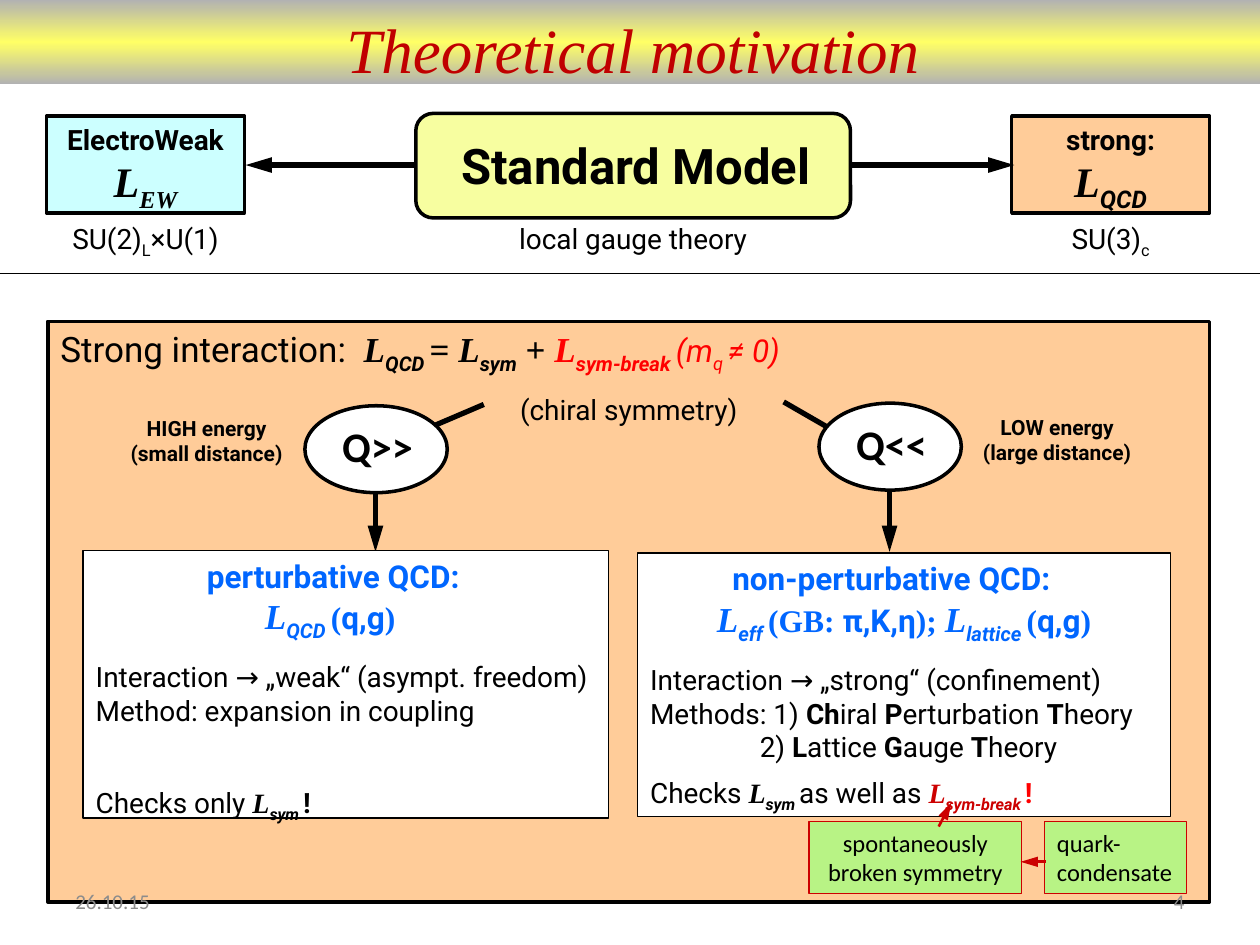
from copy import deepcopy

from lxml import etree
from pptx import Presentation
from pptx.dml.color import RGBColor
from pptx.enum.shapes import MSO_CONNECTOR, MSO_SHAPE
from pptx.enum.text import MSO_ANCHOR, MSO_AUTO_SIZE, PP_ALIGN
from pptx.oxml.ns import qn
from pptx.util import Inches, Pt

RECT, ROUND, OVAL = MSO_SHAPE.RECTANGLE, MSO_SHAPE.ROUNDED_RECTANGLE, MSO_SHAPE.OVAL
LEFT, CENTER, RIGHT = PP_ALIGN.LEFT, PP_ALIGN.CENTER, PP_ALIGN.RIGHT
TOP, MIDDLE = MSO_ANCHOR.TOP, MSO_ANCHOR.MIDDLE
FIXED, STRAIGHT = MSO_AUTO_SIZE.NONE, MSO_CONNECTOR.STRAIGHT
COLORS = {
    "black": "000000", "white": "FFFFFF", "cyan": "CCFFFF", "lemon": "F7FEA0",
    "peach": "FFCC99", "green": "B8F385", "blue": "0066FF", "red": "FF0000",
    "crimson": "CC0000", "title": "C00000", "silver": "B2B2B2", "yellow": "FFFF66",
    "grey": "8C8C8C",
}
STYLES = {
    "plain": {"name": "Roboto", "bold": False, "italic": False},
    "bold": {"name": "Roboto", "bold": True, "italic": False},
    "slant": {"name": "Roboto", "bold": False, "italic": True},
    "low": {"name": "Roboto", "bold": False, "italic": False, "baseline": -25},
    "lowslant": {"name": "Roboto", "bold": False, "italic": True, "baseline": -25},
    "index": {"name": "Roboto", "bold": True, "italic": True, "baseline": -25},
    "symbol": {"name": "Times New Roman", "bold": True, "italic": True},
    "serif": {"name": "Times New Roman", "bold": True, "italic": False},
    "headline": {"name": "Times New Roman", "bold": False, "italic": True},
    "label": {"name": "Calibri", "bold": False, "italic": False},
    "scale": {"name": "Calibri", "bold": True, "italic": False},
}


def para(*runs, **layout):
    """Pair the runs of a paragraph with its layout values."""
    return runs, layout


def term(index, **look):
    """Give the runs of a Lagrangian symbol with its index."""
    return ("L", "symbol", look), (index, "index", look)


class GridSlide:
    """Hold the style and the slide, measured on a grid of 100 by 75 cells."""

    def __init__(self, deck):
        """Open a slide with a title and two body placeholders."""
        self.slide = deck.slides.add_slide(deck.slide_layouts[3])
        self.shapes = self.slide.shapes
        self.column, self.row = deck.slide_width / 100, deck.slide_height / 75

    def cells(self, *lengths):
        """Turn alternating columns and rows into slide lengths."""
        return [round(n * (self.row if i % 2 else self.column)) for i, n in enumerate(lengths)]

    def color(self, name):
        """Look up a named colour."""
        return RGBColor.from_string(COLORS[name])

    def paint(self, shape, fill, line, width):
        """Set fill and outline."""
        if fill:
            shape.fill.solid()
            shape.fill.fore_color.rgb = self.color(fill)
        if line:
            shape.line.color.rgb = self.color(line)
            shape.line.width = Pt(width)
        else:
            shape.line.fill.background()

    def typeset(self, shape, paragraphs, size=16, style="plain", color="black",
                align=CENTER, anchor=TOP, wrap=True):
        """Fill a shape with formatted paragraphs."""
        frame = shape.text_frame
        settings = {"word_wrap": wrap, "auto_size": FIXED, "vertical_anchor": anchor}
        for key, value in settings.items():
            setattr(frame, key, value)
        for number, (runs, layout) in enumerate(paragraphs):
            paragraph = frame.paragraphs[0] if number == 0 else frame.add_paragraph()
            layout = {"alignment": align, "before": 0, "line_spacing": 1.0, **layout}
            margins = {"marL": layout.pop("left", 0), "marR": layout.pop("right", 0), "indent": 0}
            paragraph.space_before = Pt(layout.pop("before"))
            for key, value in layout.items():
                setattr(paragraph, key, value)
            properties = paragraph._p.get_or_add_pPr()
            for key, value in margins.items():
                properties.set(key, str(Inches(value)))
            etree.SubElement(properties, qn("a:buNone"))
            for item in runs:
                words, kind, *look = (item, style) if isinstance(item, str) else item
                values = {"size": size, "color": color, **STYLES[kind], **(look[0] if look else {})}
                run = paragraph.add_run()
                run.text = words
                run.font.color.rgb = self.color(values.pop("color"))
                run.font.size = Pt(values.pop("size"))
                baseline = values.pop("baseline", 0)
                for key, value in values.items():
                    setattr(run.font, key, value)
                if baseline:
                    run.font._element.set("baseline", str(baseline * 1000))

    def box(self, at, fill, line="black", width=2, kind=RECT, paragraphs=(), **text):
        """Add a preset shape with optional text."""
        shape = self.shapes.add_shape(kind, *self.cells(*at))
        shape.shadow.inherit = False
        self.paint(shape, fill, line, width)
        self.typeset(shape, paragraphs, **text)
        return shape

    def label(self, at, *paragraphs, **text):
        """Add a text box."""
        self.typeset(self.shapes.add_textbox(*self.cells(*at)), paragraphs, **text)

    def holder(self, index, at, paragraphs, fill=None, line=None, width=1, **text):
        """Move a placeholder to the front and fill it."""
        shape = self.slide.placeholders[index]
        shape.left, shape.top, shape.width, shape.height = self.cells(*at)
        self.paint(shape, fill, line, width)
        self.typeset(shape, paragraphs, **text)
        self.shapes._spTree.append(shape.element)

    def line(self, ends, width=3, color="black", arrow=True):
        """Add a straight line, by default with an arrowhead at its end."""
        link = self.shapes.add_connector(STRAIGHT, *self.cells(*ends))
        link.line.color.rgb = self.color(color)
        link.line.width = Pt(width)
        properties = link.element.spPr
        if arrow:
            etree.SubElement(properties.find(qn("a:ln")), qn("a:tailEnd"), type="triangle", len="lg")
        etree.SubElement(properties, qn("a:effectLst"))

    def band(self, at, edge, middle):
        """Add a bar that shades from edge to middle to edge."""
        bar = self.box(at, None, None)
        bar.fill.gradient()
        bar.fill.gradient_angle = 90
        stops = bar.element.spPr.find(qn("a:gradFill")).find(qn("a:gsLst"))
        stops.insert(1, deepcopy(stops[0]))
        for stop, name, place in zip(bar.fill.gradient_stops, (edge, middle, edge), (0, 0.5, 1)):
            stop.color.rgb = self.color(name)
            stop.position = place


def main():
    """Build the slide and save it."""
    deck = Presentation()
    deck.slide_width, deck.slide_height = Inches(10), Inches(7.5)
    page = GridSlide(deck)

    forces = (
        (3.7, "cyan", "ElectroWeak", ("EW", "symbol", {"baseline": -25, "size": 24}),
         ("SU(2)", ("L", "low"), "×U(1)")),
        (80.3, "peach", "strong:", ("QCD", "index", {"size": 24}), ("SU(3)", ("c", "low"))),
    )
    for left, fill, force, index, group in forces:
        page.box((left, 9.2, 15.7, 7.7), fill, paragraphs=[
            para((force, "bold")), para(("L", "symbol", {"size": 24}), index)])
        page.label((left, 17.1, 15.7, 3.7), para(*group))
    page.box((33, 9, 34.5, 8.3), "lemon", kind=ROUND)
    page.label((34.3, 10.3, 32.3, 5.7), para("Standard Model"), size=28, style="bold")
    page.label((38.7, 17.1, 23.1, 3.7), para("local gauge theory"))
    page.line((32.9, 13.1, 19.5, 13.1))
    page.line((67.5, 13.1, 80.5, 13.1))
    page.line((0, 21.7, 100, 21.7), width=0.25, arrow=False)

    mass = {"color": "red", "size": 18}
    page.box((3.8, 25.5, 92.2, 46.1), "peach", size=20, paragraphs=[
        para("Strong interaction:  ", *term("QCD "), ("= ", "serif"), *term("sym"),
             (" + ", "serif"), *term("sym-break ", color="red"), ("(m", "slant", mass),
             ("q ", "lowslant", mass), ("≠ 0)", "slant", mass), alignment=LEFT),
        para(("(chiral symmetry)", "plain", {"size": 16}), before=10)])

    regimes = (
        (24.2, 32.2, "Q>>", 8.7, 32.5, "HIGH energy", "(small distance)", (38.4, 32.1, 30.2, 35.6)),
        (65, 32, "Q<<", 76.2, 32.4, "LOW energy", "(large distance)", (62.2, 31.9, 68.1, 35.3)),
    )
    for left, top, scale, side, height, energy, distance, branch in regimes:
        page.line(branch)
        page.box((left, top, 11.3, 6.9), "white", kind=OVAL)
        page.label((left + 1.3, top + 0.7, 8.9, 5), para(scale), size=24, style="scale")
        page.label((side, height, 15.4, 5), para(energy), para(distance), size=12, style="bold")
        page.line((left + 5.6, top + 7, left + 5.6, 43.8))

    blue, formula = {"color": "blue", "size": 18}, {"color": "blue", "size": 20}
    fields = (("(", "serif", blue), ("q,g", "bold", blue), (")", "serif", blue))
    panel = {"fill": "white", "line": "black", "align": LEFT}
    page.holder(1, (6.6, 43.7, 41.7, 21.2), [
        para(("perturbative QCD:", "bold", blue), alignment=CENTER, right=0.2),
        para(*term("QCD ", **formula), *fields, alignment=CENTER, right=0.25),
        para("Interaction → „weak“ (asympt. freedom)", before=10),
        para("Method: expansion in coupling"),
        para("Checks only ", *term("sym "), ("!", "bold"), before=27, line_spacing=1.3),
    ], **panel)
    page.holder(2, (50.6, 43.9, 42.3, 20.9), [
        para(("non-perturbative QCD:", "bold", blue), alignment=CENTER, right=0.2),
        para(*term("eff ", **formula), ("(GB: ", "serif", blue), ("π,K,η", "bold", blue),
             ("); ", "serif", blue), *term("lattice ", **formula), *fields, alignment=CENTER),
        para("Interaction → „strong“ (confinement)", before=10),
        para("Methods: 1) ", ("Ch", "bold"), "iral ", ("P", "bold"), "erturbation ",
             ("T", "bold"), "heory"),
        para("2) ", ("L", "bold"), "attice ", ("G", "bold"), "auge ", ("T", "bold"), "heory",
             left=0.87),
        para("Checks ", *term("sym "), "as well as ", *term("sym-break ", color="crimson"),
             ("!", "bold", {"color": "red"}), before=7),
    ], **panel)

    note = {"fill": "green", "line": "crimson", "width": 0.75, "size": 14, "style": "label",
            "anchor": MIDDLE}
    page.box((64.2, 65.2, 16.9, 5.7), paragraphs=[para("spontaneously"), para("broken symmetry")],
             **note)
    page.box((82.9, 65.2, 11.3, 5.7), paragraphs=[para("quark-"), para("condensate")],
             align=LEFT, wrap=False, **note)
    for ends in ((74.5, 65.6, 75.5, 63.7), (83, 68.4, 81, 68.4)):
        page.line(ends, width=1.5, color="crimson")

    page.band((0, 0, 100, 6.7), "silver", "yellow")
    page.holder(0, (19.2, 0.3, 62.1, 5), [para("Theoretical motivation")], size=36,
                style="headline", color="title", wrap=False)
    for left, words, align in ((5, "26.10.15", LEFT), (71.7, "4", RIGHT)):
        page.label((left, 69.5, 23.3, 4), para(words), size=12, style="label", color="grey",
                   align=align, anchor=MIDDLE)
    deck.save("out.pptx")


if __name__ == "__main__":
    main()
